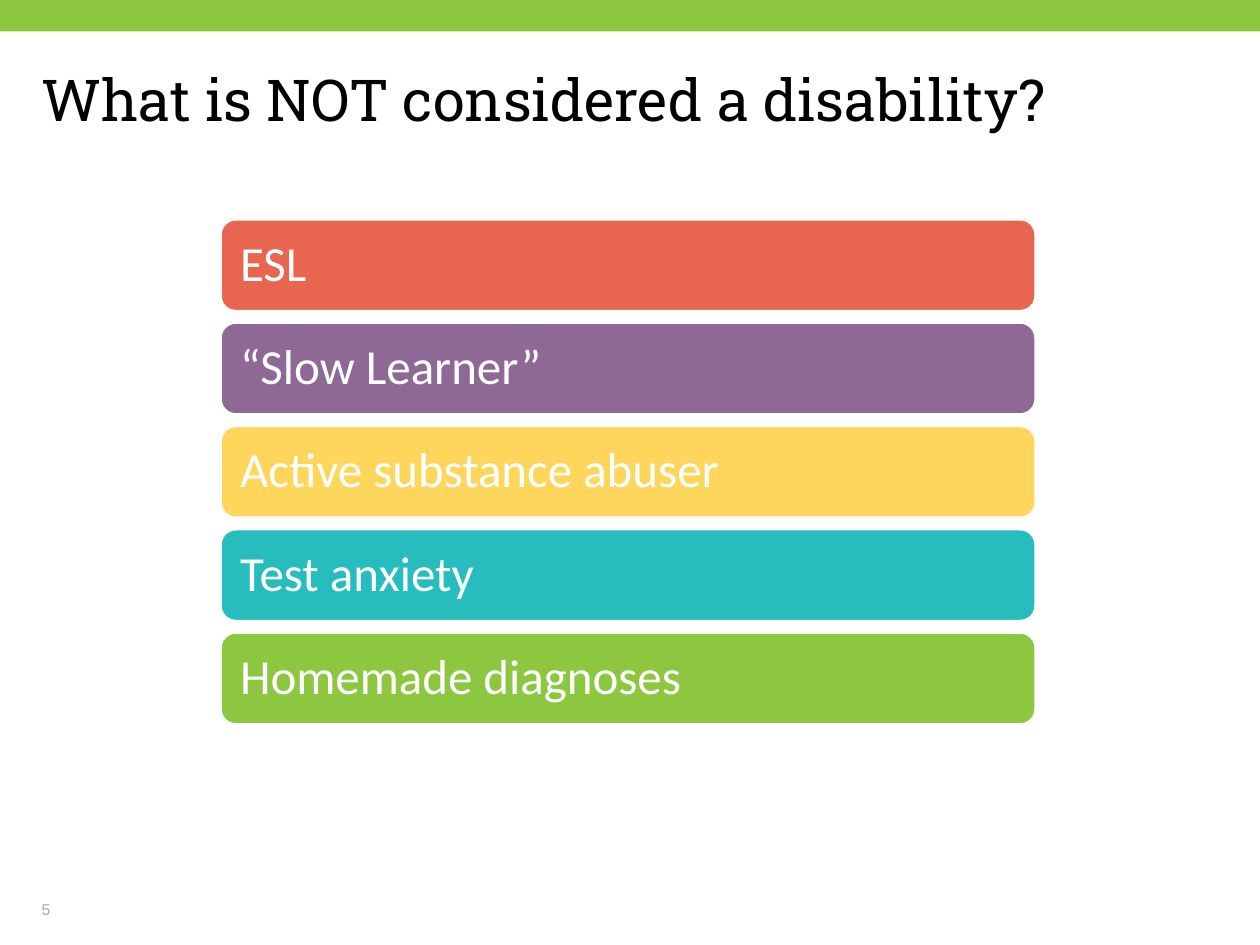
from pptx import Presentation
from pptx.dml.color import RGBColor
from pptx.enum import shapes, text
from pptx.util import Inches, Pt

GREEN = RGBColor(0x8D, 0xC6, 0x3F)
RED = RGBColor(0xE8, 0x66, 0x50)
PURPLE = RGBColor(0x8E, 0x69, 0x96)
YELLOW = RGBColor(0xFF, 0xD6, 0x5C)
TEAL = RGBColor(0x27, 0xBD, 0xBE)
WHITE = RGBColor(0xFF, 0xFF, 0xFF)
BLACK = RGBColor(0, 0, 0)
GRAY = RGBColor(0xAF, 0xAB, 0xAB)

BAR_TOP, BAR_STEP = 1.74, 0.82
BARS = [
    ("ESL", RED),
    ("“Slow Learner”", PURPLE),
    ("Active substance abuser", YELLOW),
    ("Test anxiety", TEAL),
    ("Homemade diagnoses", GREEN),
]


def write(sp, words, font, size, color, anchor, inset=0):
    """Put one left-aligned paragraph into a shape."""
    tf = sp.text_frame
    tf.word_wrap = True
    tf.auto_size = text.MSO_AUTO_SIZE.NONE
    tf.vertical_anchor = anchor
    tf.margin_left = tf.margin_right = Inches(inset)
    tf.margin_top = tf.margin_bottom = Inches(inset)
    p = tf.paragraphs[0]
    p.text = words
    p.alignment = text.PP_ALIGN.LEFT
    p.line_spacing = 0.9
    p.space_before = Pt(0)
    p.font.name = font
    p.font.size = Pt(size)
    p.font.color.rgb = color


prs = Presentation()
prs.slide_width, prs.slide_height = Inches(10), Inches(7.5)
s = prs.slides.add_slide(prs.slide_layouts[5])

band = s.shapes.add_shape(shapes.MSO_SHAPE.RECTANGLE, 0, 0, Inches(10), Inches(0.25))
band.shadow.inherit = False
band.fill.solid()
band.fill.fore_color.rgb = GREEN
band.line.fill.background()

title = s.shapes.title
title.left, title.top = Inches(0.33), Inches(0.57)
title.width, title.height = Inches(9.31), Inches(0.89)
write(title, "What is NOT considered a disability?", "Roboto Slab", 33, BLACK,
      text.MSO_ANCHOR.TOP)

number = s.shapes.add_textbox(Inches(0.33), Inches(7.05), Inches(2.25), Inches(0.24))
write(number, "5", "Arial", 9, GRAY, text.MSO_ANCHOR.BOTTOM)
number.text_frame.paragraphs[0].line_spacing = 1.0

group = s.shapes.add_group_shape()
for i, (words, color) in enumerate(BARS):
    bar = group.shapes.add_shape(shapes.MSO_SHAPE.ROUNDED_RECTANGLE, Inches(1.75),
                                 Inches(BAR_TOP + i * BAR_STEP), Inches(6.47), Inches(0.73))
    bar.shadow.inherit = False
    bar.fill.solid()
    bar.fill.fore_color.rgb = color
    bar.line.color.rgb = WHITE
    bar.line.width = Pt(1.5)
    write(bar, words, "Calibri", 28, WHITE, text.MSO_ANCHOR.MIDDLE, 0.12)

prs.save("out.pptx")
